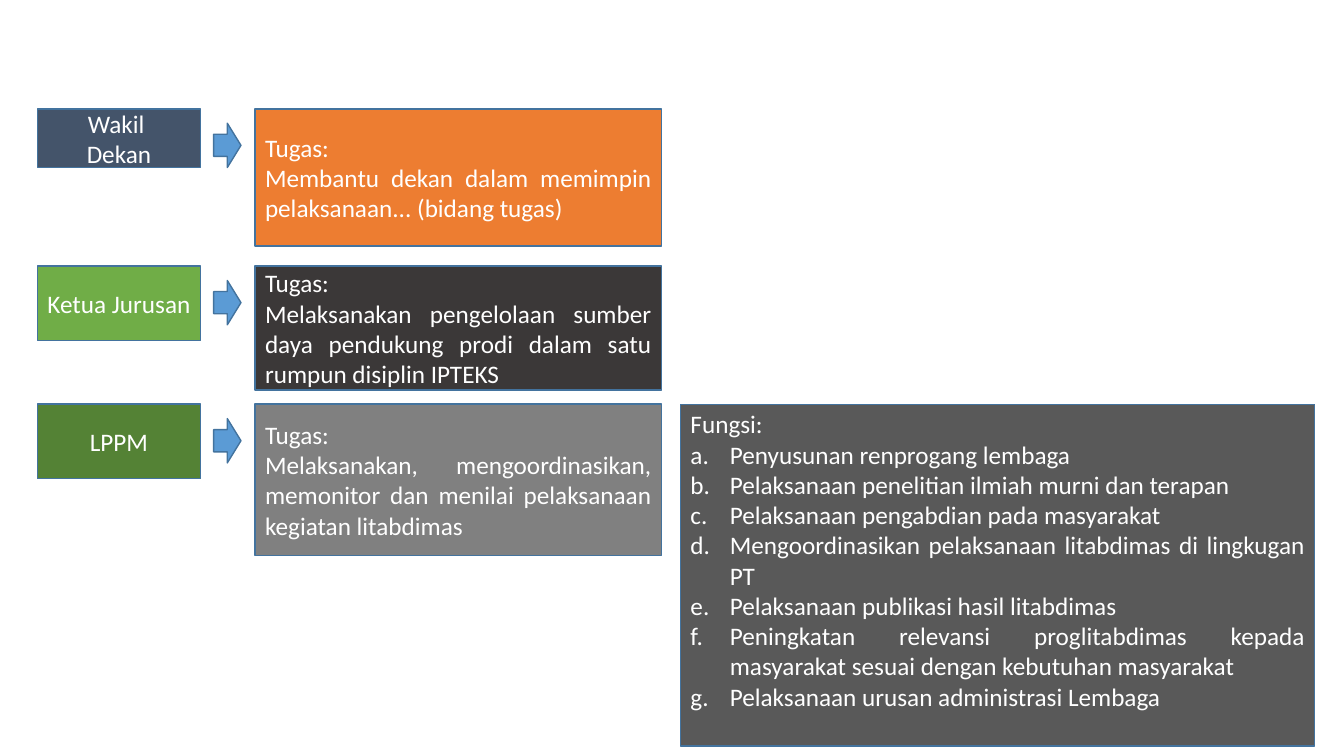
import pptx
import pptx.dml.color
import pptx.enum.shapes
import pptx.enum.text
import pptx.oxml.xmlchemy
import pptx.util
from lxml import etree

SHAPES = pptx.enum.shapes.MSO_SHAPE
ALIGN = pptx.enum.text.PP_ALIGN
DRAWING = "{http://schemas.openxmlformats.org/drawingml/2006/main}"


def color(value):
    return pptx.dml.color.RGBColor.from_string(value)


def write(paragraph, text, *, font, size, ink, align, lettered=False):
    """Fill one paragraph; lettered ones get a hanging a., b., c. label."""
    paragraph.alignment = align
    run = paragraph.add_run()
    run.text = text
    run.font.name = font
    run.font.size = pptx.util.Pt(size)
    run.font.color.rgb = color(ink)
    if lettered:
        properties = paragraph._p.get_or_add_pPr()
        indent = pptx.util.Inches(0.39)
        properties.set("marL", str(indent))
        properties.set("indent", str(-indent))
        etree.SubElement(properties, DRAWING + "buFont", typeface="+mj-lt")
        etree.SubElement(properties, DRAWING + "buAutoNum", type="alphaLcPeriod")


class SlideBuilder:
    """Holds the style and the slide; places are percent of the slide's size."""
    text_style = {"font": "Calibri", "size": 18, "ink": "FFFFFF"}
    outline = "43739E"
    arrow_fill = "5B9BD5"

    def __init__(self, presentation):
        self.width = presentation.slide_width
        self.height = presentation.slide_height
        self.slide = presentation.slides.add_slide(presentation.slide_layouts[6])

    def shape(self, kind, left, top, width, height, fill):
        shape = self.slide.shapes.add_shape(
            kind,
            round(self.width * left / 100), round(self.height * top / 100),
            round(self.width * width / 100), round(self.height * height / 100))
        shape.shadow.inherit = False
        shape.fill.solid()
        shape.fill.fore_color.rgb = color(fill)
        shape.line.color.rgb = color(self.outline)
        shape.line.width = pptx.util.Pt(1)
        return shape

    def box(self, place, fill, lines, align, items=(), bottom_inset=0.05):
        shape = self.shape(SHAPES.RECTANGLE, *place, fill)
        frame = shape.text_frame
        frame.word_wrap = True
        frame.vertical_anchor = pptx.enum.text.MSO_ANCHOR.MIDDLE
        frame.margin_bottom = pptx.util.Inches(bottom_inset)
        for index, text in enumerate([*lines, *items]):
            paragraph = frame.add_paragraph() if index else frame.paragraphs[0]
            write(paragraph, text, align=align, lettered=index >= len(lines),
                  **self.text_style)

    def arrow(self, left, top, width, height):
        self.shape(SHAPES.RIGHT_ARROW, left, top, width, height, self.arrow_fill)


# Columns as (left, width)
ROLE = (2.78, 12.15)
ARROW = (15.9, 2.03)
DUTY = (18.98, 30.23)
FUNCTIONS = (50.64, 47.19)
ARROW_DROP, ARROW_HEIGHT = 1.9, 5.87

# Rows: top, role (height, fill, lines), duty (height, fill, text)
ROWS = [
    (14.4, (7.73, "44546A", ["Wakil ", "Dekan"]),
     (18.13, "ED7D31",
      "Membantu dekan dalam memimpin pelaksanaan... (bidang tugas)")),
    (35.2, (9.87, "70AD47", ["Ketua Jurusan"]),
     (16.4, "3B3838",
      "Melaksanakan pengelolaan sumber daya pendukung prodi dalam satu "
      "rumpun disiplin IPTEKS")),
    (53.47, (9.87, "548235", ["LPPM"]),
     (20, "808080",
      "Melaksanakan, mengoordinasikan, memonitor dan menilai pelaksanaan "
      "kegiatan litabdimas")),
]

FUNCTION_ITEMS = [
    "Penyusunan renprogang lembaga",
    "Pelaksanaan penelitian ilmiah murni dan terapan",
    "Pelaksanaan pengabdian pada masyarakat",
    "Mengoordinasikan pelaksanaan litabdimas di lingkugan PT",
    "Pelaksanaan publikasi hasil litabdimas",
    "Peningkatan relevansi proglitabdimas kepada masyarakat sesuai dengan "
    "kebutuhan masyarakat",
    "Pelaksanaan urusan administrasi Lembaga",
]


def main():
    presentation = pptx.Presentation()
    presentation.slide_width = pptx.util.Inches(13.33)
    presentation.slide_height = pptx.util.Inches(7.5)
    builder = SlideBuilder(presentation)

    # Each role points to its duty
    for top, (role_height, role_fill, role), (duty_height, duty_fill, duty) in ROWS:
        builder.box((ROLE[0], top, ROLE[1], role_height), role_fill, role,
                    ALIGN.CENTER)
        builder.arrow(ARROW[0], top + ARROW_DROP, ARROW[1], ARROW_HEIGHT)
        builder.box((DUTY[0], top, DUTY[1], duty_height), duty_fill,
                    ["Tugas:", duty], ALIGN.JUSTIFY)

    # Functions beside the last row
    builder.box((FUNCTIONS[0], ROWS[-1][0], FUNCTIONS[1], 45.2), "595959",
                ["Fungsi:"], ALIGN.JUSTIFY, FUNCTION_ITEMS, bottom_inset=0.35)

    presentation.save("out.pptx")


if __name__ == "__main__":
    main()
